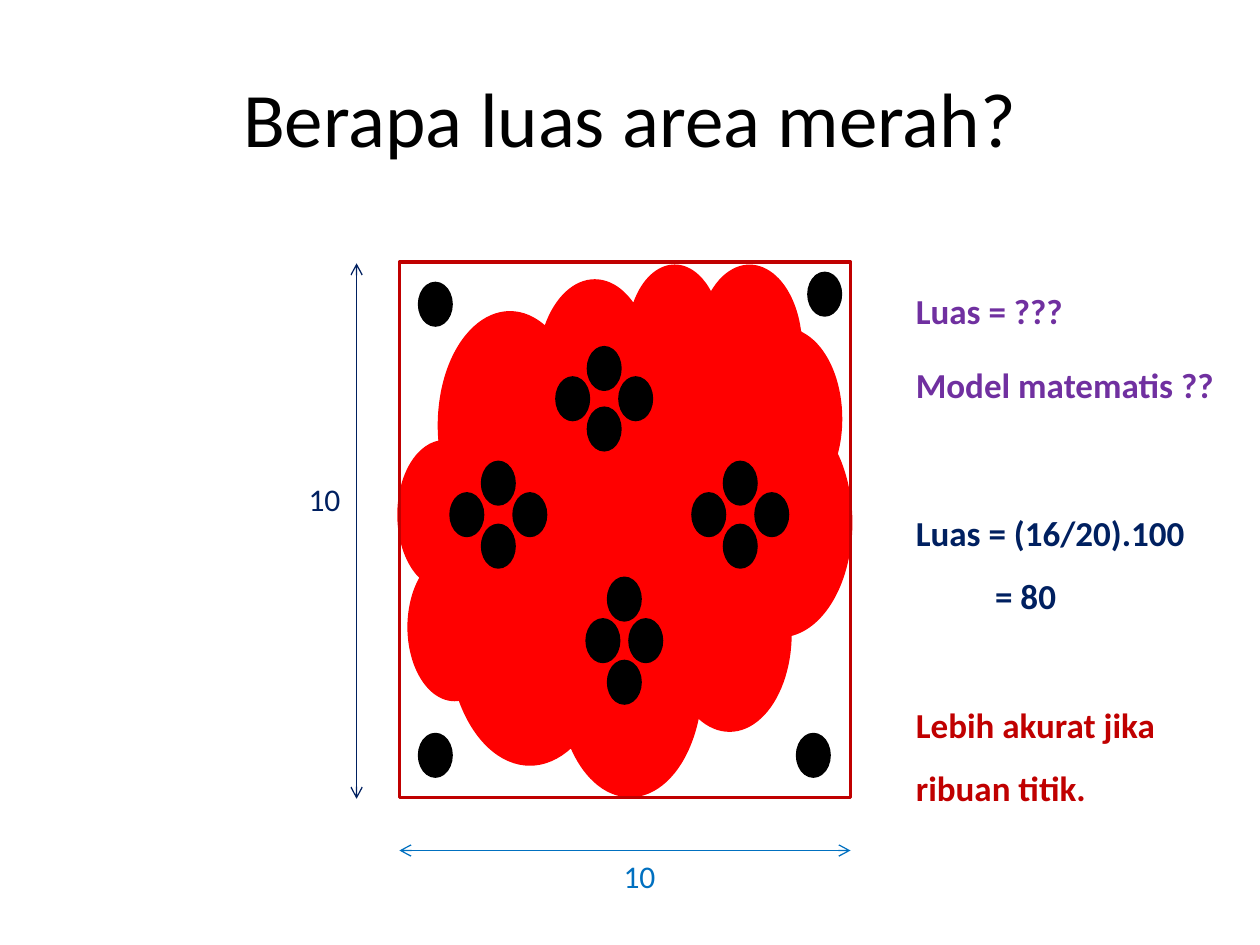
from lxml import etree
from pptx import Presentation
from pptx.dml.color import RGBColor
from pptx.enum import shapes, text
from pptx.oxml import ns
from pptx.util import Inches, Pt

COLORS = {
    "black": "000000",
    "area": "FF0000",
    "border": "C00000",
    "purple": "7030A0",
    "navy": "002060",
    "blue": "0070C0",
}


def add_outline(kind, left, top, width, height, line, fill=None):
    shape = page.shapes.add_shape(
        kind, Inches(left), Inches(top), Inches(width), Inches(height)
    )
    shape.shadow.inherit = False
    if fill:
        shape.fill.solid()
        shape.fill.fore_color.rgb = RGBColor.from_string(COLORS[fill])
    else:
        shape.fill.background()
    shape.line.color.rgb = RGBColor.from_string(COLORS[line])
    shape.line.width = Pt(2)


def add_text(left, top, width, height, words, color, size=20, bold=True, spacing=1.5, wrap=True):
    box = page.shapes.add_textbox(Inches(left), Inches(top), Inches(width), Inches(height))
    frame = box.text_frame
    frame.word_wrap = wrap
    frame.auto_size = text.MSO_AUTO_SIZE.SHAPE_TO_FIT_TEXT
    frame.text = words
    for para in frame.paragraphs:
        para.line_spacing = spacing
        for span in para.runs:
            span.font.name = "Calibri"
            span.font.size = Pt(size)
            span.font.bold = bold
            span.font.color.rgb = RGBColor.from_string(COLORS[color])
    return frame


deck = Presentation()
deck.slide_width, deck.slide_height = Inches(10), Inches(7.5)
page = deck.slides.add_slide(deck.slide_layouts[5])

title = page.shapes.title
title.left, title.top = Inches(0.5), Inches(0.3)
title.width, title.height = Inches(9), Inches(1.25)
title.text_frame.text = "Berapa luas area merah?"
title.text_frame.vertical_anchor = text.MSO_ANCHOR.MIDDLE
heading = title.text_frame.paragraphs[0]
heading.alignment = text.PP_ALIGN.CENTER
heading_font = heading.runs[0].font
heading_font.name = "Calibri"
heading_font.size = Pt(44)
heading_font.color.rgb = RGBColor.from_string(COLORS["black"])

add_outline(shapes.MSO_SHAPE.CLOUD, 3.17, 2.1, 3.58, 4.2, "area", "area")
add_outline(shapes.MSO_SHAPE.RECTANGLE, 3.17, 2.08, 3.58, 4.25, "border")

dots = [(3.33, 2.25), (6.42, 2.17), (3.33, 5.83), (6.33, 5.83)]
clusters = [
    (3.83, 3.92, 0.25, 0.25),
    (5.75, 3.92, 0.25, 0.25),
    (4.67, 3.0, 0.25, 0.24),
    (4.83, 4.92, 0.17, 0.33),
]
for x, y, dx, dy in clusters:
    dots += [(x - dx, y), (x, y - dy), (x + dx, y), (x, y + dy)]
for x, y in dots:
    add_outline(shapes.MSO_SHAPE.OVAL, x, y, 0.25, 0.33, "black", "black")

add_text(7.17, 2.08, 2.67, 0.55, "Luas = ???", "purple")
add_text(7.17, 2.67, 2.67, 0.55, "Model matematis ??", "purple")
formula = add_text(7.17, 3.84, 2.67, 1.11, "Luas = (16/20).100\n= 80", "navy")
result = formula.paragraphs[1]._p.get_or_add_pPr()
result.set("marL", str(Inches(0.63)))
result.set("indent", "0")
add_text(7.17, 5.37, 2.58, 1.05, "Lebih akurat jika ribuan titik.", "border")

dimensions = [
    ((2.35, 3.76), (2.83, 2.09, 2.83, 6.34), "navy"),
    ((4.85, 6.75), (6.75, 6.75, 3.17, 6.75), "blue"),
]
for (left, top), ends, color in dimensions:
    add_text(left, top, 0.48, 0.4, "10", color, 18, False, 1.0, False)
    arrow = page.shapes.add_connector(
        shapes.MSO_CONNECTOR.STRAIGHT, *[Inches(end) for end in ends]
    )
    arrow.line.color.rgb = RGBColor.from_string(COLORS[color])
    arrow.line.width = Pt(0.75)
    for tag in ("a:headEnd", "a:tailEnd"):
        etree.SubElement(arrow.line._get_or_add_ln(), ns.qn(tag), type="arrow")
    etree.SubElement(arrow._element.spPr, ns.qn("a:effectLst"))

deck.save("out.pptx")
